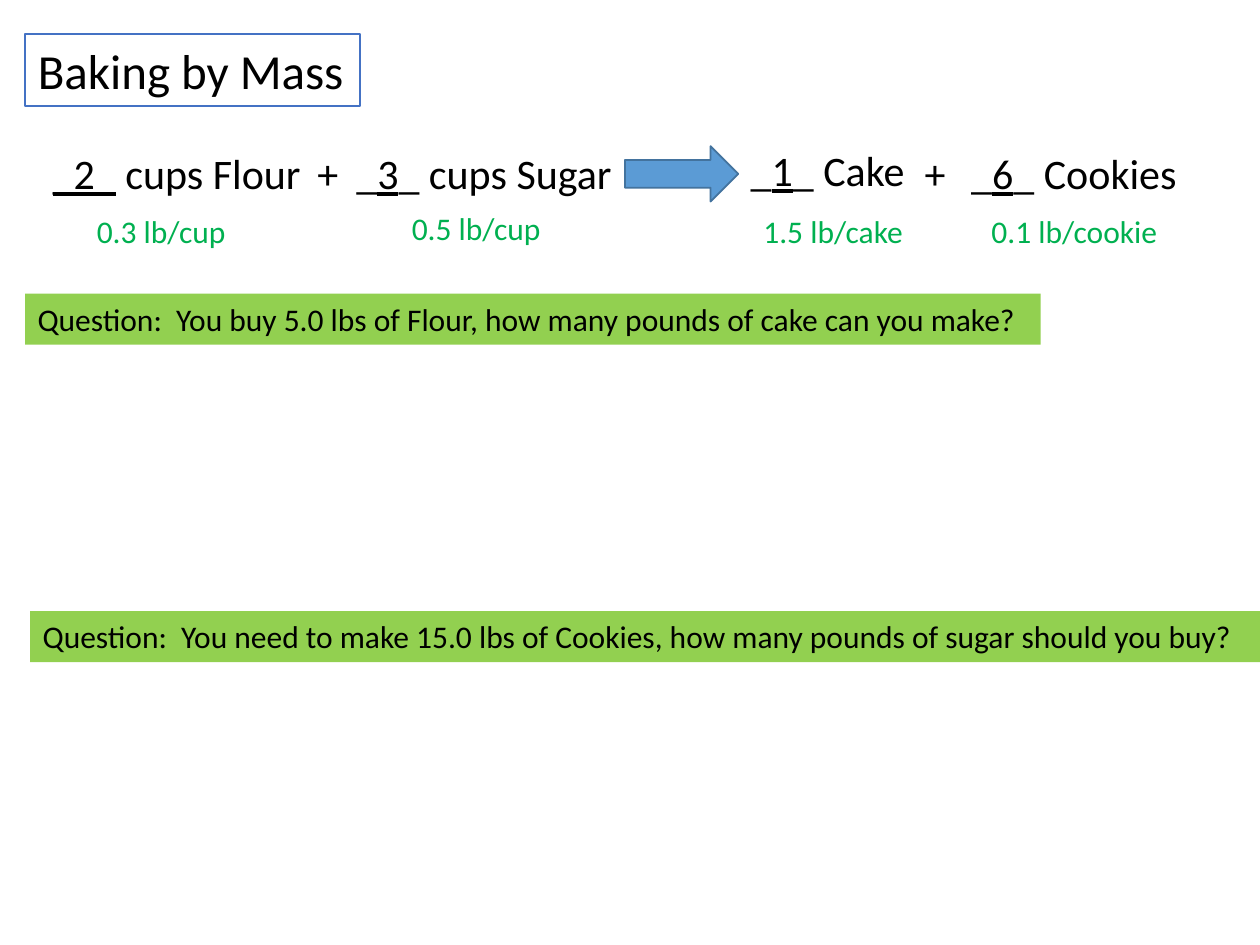
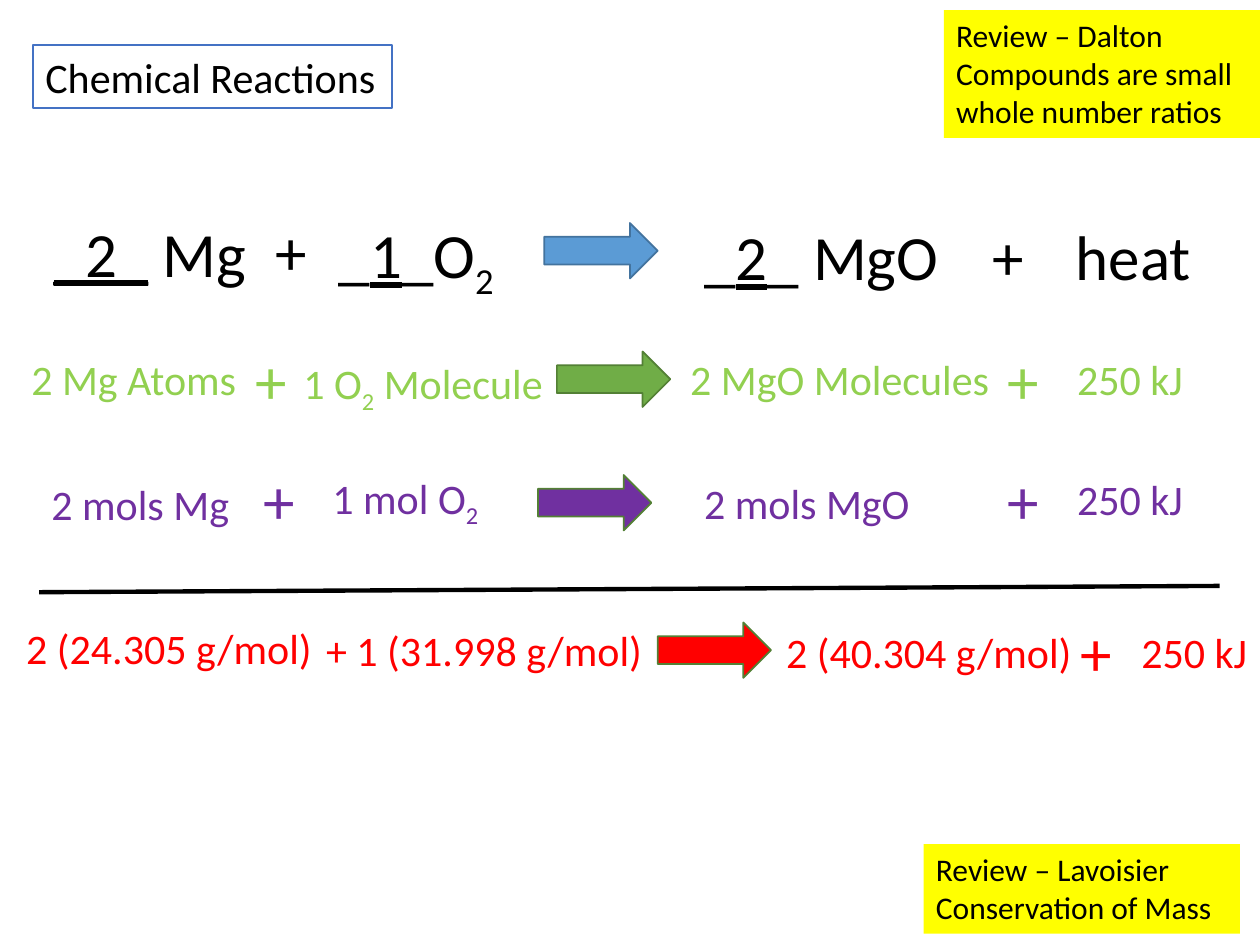
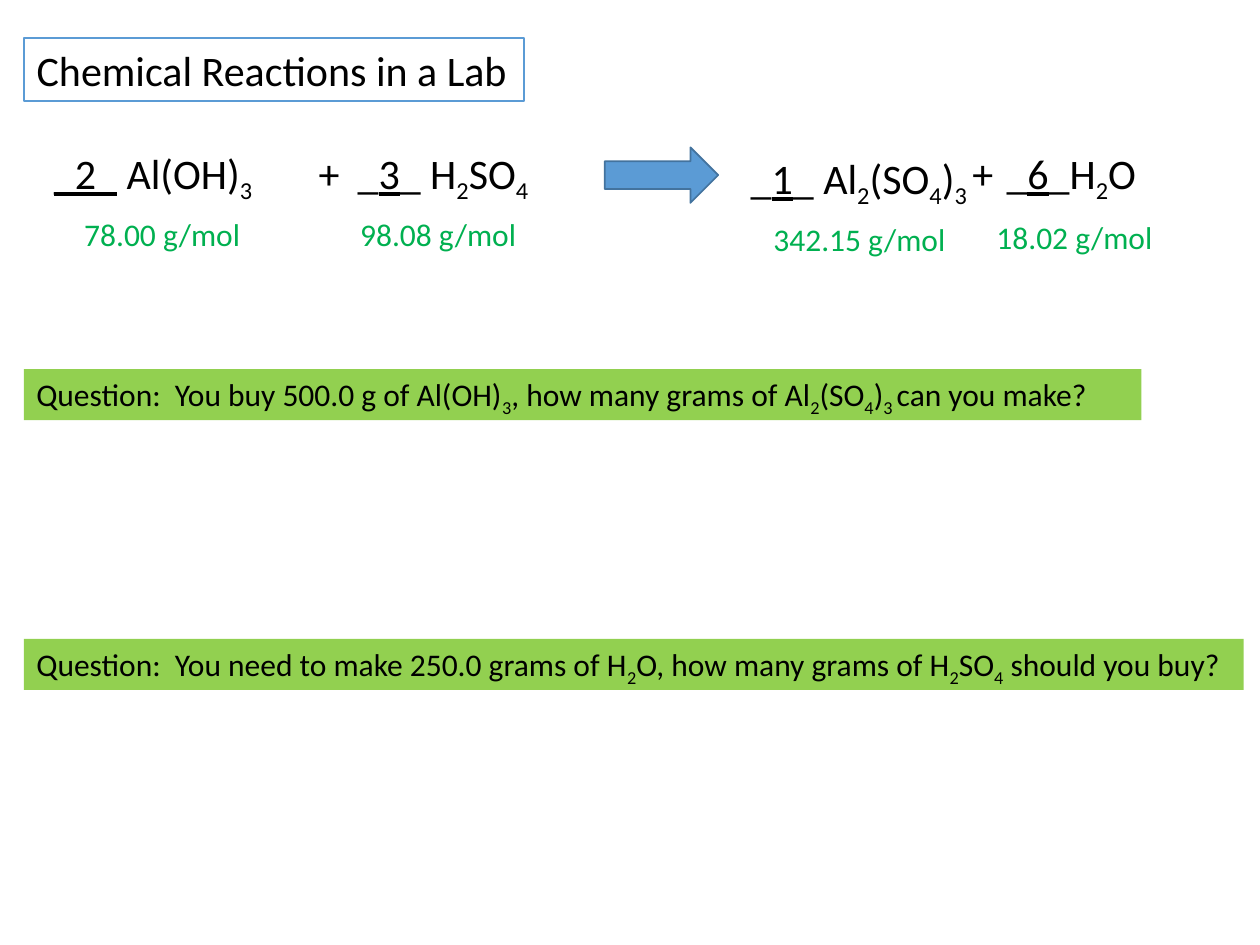
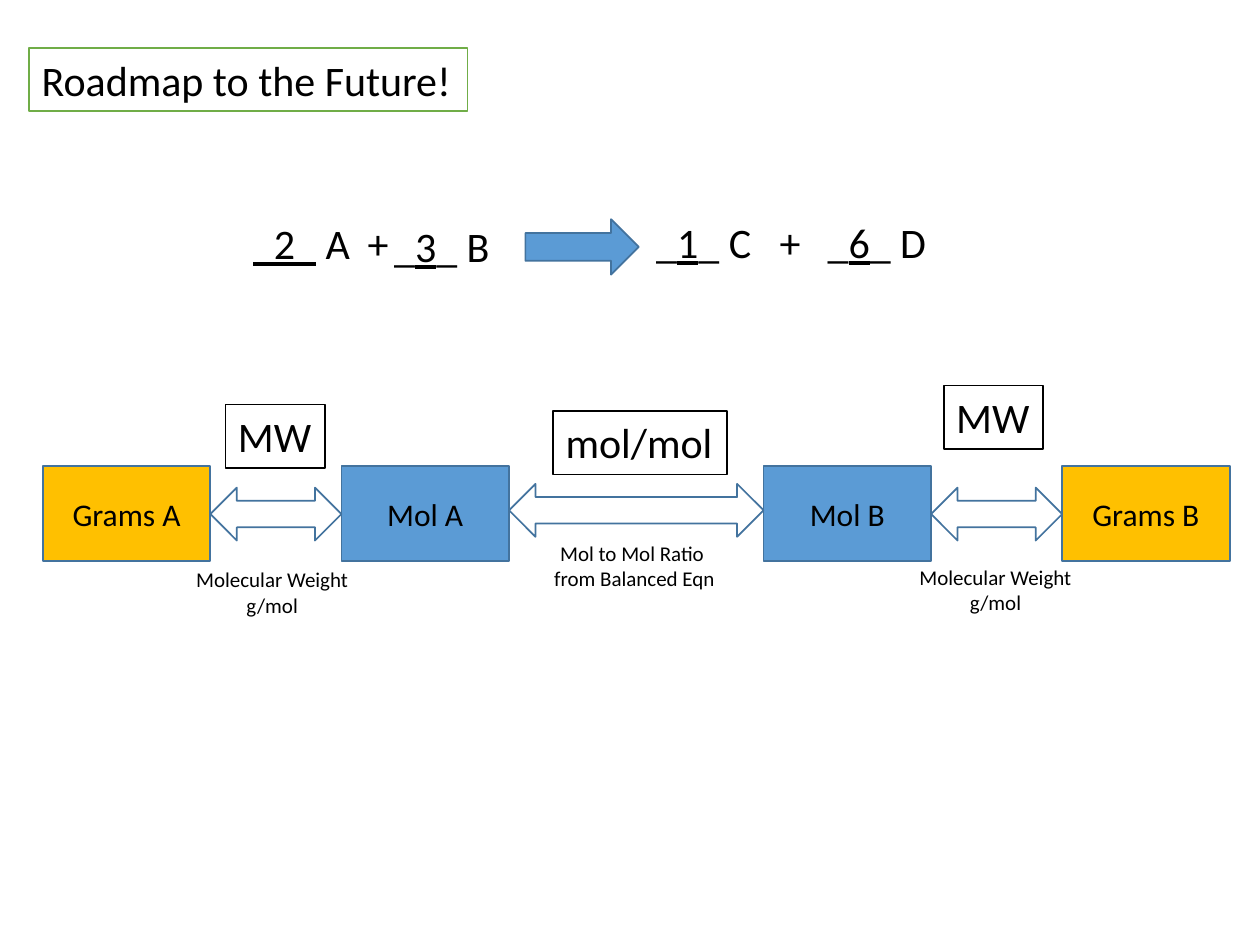
from itertools import pairwise

from lxml.etree import SubElement
from pptx import Presentation
from pptx.dml.color import RGBColor
from pptx.enum.shapes import MSO_CONNECTOR, MSO_SHAPE
from pptx.enum.text import MSO_ANCHOR, MSO_AUTO_SIZE, PP_ALIGN
from pptx.oxml.ns import qn
from pptx.util import Inches, Pt

FONT = "Calibri"
COLORS = {
    "black": "000000", "white": "FFFFFF", "title blue": "4472C4",
    "blue": "5B9BD5", "dark blue": "43739E", "green": "70AD47",
    "dark green": "538035", "lime": "92D050", "unit green": "00B050",
    "purple": "7030A0", "red": "FF0000", "yellow": "FFFF00", "gold": "FFC000",
}
ARROW_WIDTH, ARROW_HEIGHT = 9, 4.4

presentation = Presentation()
presentation.slide_width = Inches(10)
presentation.slide_height = Inches(7.5)
COLUMN = presentation.slide_width / 100
ROW = presentation.slide_height / 75


def style_shape(shape, left, top, width, height, fill=None, line=None):
    shape.left, shape.width = int(left * COLUMN), int(width * COLUMN)
    shape.top, shape.height = int(top * ROW), int(height * ROW)
    shape.shadow.inherit = False
    if fill:
        shape.fill.solid()
        shape.fill.fore_color.rgb = RGBColor.from_string(COLORS[fill])
    else:
        shape.fill.background()
    if line:
        shape.line.color.rgb = RGBColor.from_string(COLORS[line])
        shape.line.width = Pt(1)
    else:
        shape.line.fill.background()


def add_text(slide, text, left, top, width, height=None, shape=None, size=24, color="black",
             fill=None, line=None, align=PP_ALIGN.LEFT, lines=1, wrap=False):
    shape = shape or slide.shapes.add_textbox(0, 0, 0, 0)
    frame = shape.text_frame
    frame.word_wrap = wrap
    frame.auto_size = MSO_AUTO_SIZE.NONE if height else MSO_AUTO_SIZE.SHAPE_TO_FIT_TEXT
    frame.vertical_anchor = MSO_ANCHOR.MIDDLE if height else MSO_ANCHOR.TOP
    style_shape(shape, left, top, width, height or lines * size * 1.22 / 7.2 + 1, fill, line)
    for index, content in enumerate(text.split("\n")):
        paragraph = frame.add_paragraph() if index else frame.paragraphs[0]
        paragraph.alignment = align
        marked = content.replace("[", "|[").replace("{", "|{").replace("]", "|").replace("}", "|")
        for piece in filter(None, marked.split("|")):
            run = paragraph.add_run()
            run.text = piece.lstrip("[{")
            run.font.name, run.font.size = FONT, Pt(size)
            run.font.color.rgb = RGBColor.from_string(COLORS[color])
            if piece.startswith("["):
                run.font.underline = True
            if piece.startswith("{"):
                run._r.get_or_add_rPr().set("baseline", "-25000")


titles = [
    ("Baking by Mass", 2, 2.7, 26.6, 5.7, 28, "title blue"),
    ("Chemical Reactions", 2.6, 3.6, 28.5, 5, 24, "title blue"),
    ("Chemical Reactions in a Lab", 1.9, 3, 39.7, 5, 24, "blue"),
    ("Roadmap to the Future!", 2.3, 3.8, 34.8, 5, 24, "green"),
]
slides = []
for title, left, top, width, height, size, line in titles:
    slide = presentation.slides.add_slide(presentation.slide_layouts[5])
    add_text(slide, title, left, top, width, height, shape=slide.shapes.title, size=size,
             fill="white", line=line)
    slides.append(slide)
baking, reactions, lab, roadmap = slides

equations = [
    (baking, 24, [("[_2_] cups Flour", 3.2, 11.2, 21.9), ("+", 24.2, 11.2, 3.7),
                  ("_[3]_ cups Sugar", 27.3, 11.2, 22.5), ("_[1]_ Cake", 58.6, 11, 14.3),
                  ("+", 72.4, 11.2, 3.7), ("_[6]_ Cookies", 76.1, 11.2, 18.5)]),
    (reactions, 36, [("[_2_] Mg", 3.3, 16.5, 17.4), ("+", 20.9, 16.4, 4.5),
                     ("_[1]_O{2}", 25.9, 16.6, 14.6), ("_[2]_ MgO", 54.9, 16.8, 20.8),
                     ("+", 77.8, 16.8, 4.5), ("heat", 84.4, 16.8, 11.2)]),
    (lab, 24, [("[_2_] Al(OH){3}", 3.3, 11.2, 19.4), ("+", 24.3, 11.2, 3.7),
               ("_[3]_ H{2}SO{4}", 27.4, 11.2, 16), ("_[1]_ Al{2}(SO{4}){3}", 58.6, 11.6, 20.3),
               ("+", 76.2, 11.2, 3.7), ("_[6]_H{2}O", 78.9, 11.2, 12.6)]),
    (roadmap, 24, [("[_2_] A", 19.1, 16.8, 9.8), ("+", 28.2, 16.8, 3.7),
                   ("_[3]_ B", 30.3, 17, 9.7), ("_[1]_ C", 51.1, 16.7, 9.6),
                   ("+", 60.9, 16.7, 3.7), ("_[6]_ D", 64.7, 16.7, 9.9)]),
]
for slide, size, terms in equations:
    for text, left, top, width in terms:
        add_text(slide, text, left, top, width, size=size)

reaction_arrows = [
    (baking, 49.6, 11.6, "blue", "dark blue"),
    (reactions, 43.2, 17.7, "blue", "dark blue"),
    (reactions, 44.2, 27.9, "green", "dark green"),
    (reactions, 42.7, 37.7, "purple", "dark green"),
    (reactions, 52.2, 49.4, "red", "dark green"),
    (lab, 48, 11.7, "blue", "dark blue"),
    (roadmap, 41.7, 17.4, "blue", "dark blue"),
]
for slide, left, top, fill, line in reaction_arrows:
    arrow = slide.shapes.add_shape(MSO_SHAPE.RIGHT_ARROW, 0, 0, 0, 0)
    style_shape(arrow, left, top, ARROW_WIDTH, ARROW_HEIGHT, fill, line)

unit_masses = [
    (baking, "0.3 lb/cup", 6.7, 16.3, 12.4),
    (baking, "0.5 lb/cup", 31.7, 16.1, 12.4),
    (baking, "1.5 lb/cake", 59.6, 16.3, 13.2),
    (baking, "0.1 lb/cookie", 77.7, 16.3, 15.3),
    (lab, "78.00 g/mol", 5.7, 16.6, 14.5),
    (lab, "98.08 g/mol", 27.6, 16.6, 14.5),
    (lab, "342.15 g/mol", 60.4, 17, 15.8),
    (lab, "18.02 g/mol", 78.1, 16.8, 14.5),
]
for slide, text, left, top, width in unit_masses:
    add_text(slide, text, left, top, width, size=18, color="unit green")

questions = [
    (baking, "You buy 5.0 lbs of Flour, how many pounds of cake can you make?", 2, 23.3, 80.6),
    (baking, "You need to make 15.0 lbs of Cookies, how many pounds of sugar should you buy?",
     2.4, 48.5, 97.6),
    (lab, "You buy 500.0 g of Al(OH){3}, how many grams of Al{2}(SO{4}){3 }can you make?",
     1.9, 29.3, 88.7),
    (lab, "You need to make 250.0 grams of H{2}O, how many grams of H{2}SO{4} should you buy?",
     1.9, 50.7, 96.8),
]
for slide, text, left, top, width in questions:
    add_text(slide, "Question:  " + text, left, top, width, size=18, fill="lime")

reaction_rows = [
    ("lime", [("2 Mg Atoms", 1.5, 27.6, 18.4), ("1 O{2} Molecule", 23.1, 27.9, 21.3),
              ("2 MgO Molecules", 53.8, 27.6, 26), ("250 kJ", 84.5, 27.6, 10.5)],
     26.6, (19.3, 79)),
    ("purple", [("2 mols Mg", 3.1, 37.5, 16.2), ("1 mol O{2}", 25.4, 37, 13.8),
                ("2 mols MgO", 54.9, 37.4, 18.4), ("250 kJ", 84.5, 37.1, 10.5)],
     36.1, (19.9, 79)),
    ("red", [("2 (24.305 g/mol)", 1.1, 48.9, 24.8), ("+ 1 (31.998 g/mol)", 24.9, 49.1, 27.3),
             ("2 (40.304 g/mol)", 61.4, 49.2, 24.8), ("250 kJ", 89.6, 49.2, 10.5)],
     48.2, (84.8,)),
]
for color, terms, plus_top, plus_lefts in reaction_rows:
    for text, left, top, width in terms:
        add_text(reactions, text, left, top, width, color=color)
    for left in plus_lefts:
        add_text(reactions, "+", left, plus_top, 4.5, size=36, color=color)

divider = reactions.shapes.add_connector(
    MSO_CONNECTOR.STRAIGHT, int(3.1 * COLUMN), int(47 * ROW), int(96.8 * COLUMN), int(46.5 * ROW))
divider.line.color.rgb = RGBColor.from_string(COLORS["black"])
divider.line.width = Pt(2.5)
SubElement(divider._element.spPr, qn("a:effectLst"))

reviews = [
    ("Review – Dalton\nCompounds are small whole number ratios", 74.9, 0.8, 3),
    ("Review – Lavoisier\nConservation of Mass", 73.3, 67, 2),
]
for text, left, top, lines in reviews:
    add_text(reactions, text, left, top, 25.1, size=18, fill="yellow", lines=lines, wrap=True)

STATION_WIDTH = 13.3
stations = [("Grams A", 3.4, "gold"), ("Mol A", 27.1, "blue"),
            ("Mol B", 60.6, "blue"), ("Grams B", 84.3, "gold")]
for text, left, fill in stations:
    station = roadmap.shapes.add_shape(MSO_SHAPE.RECTANGLE, 0, 0, 0, 0)
    add_text(roadmap, text, left, 37, STATION_WIDTH, 7.5, shape=station, size=18,
             fill=fill, line="dark blue", align=PP_ALIGN.CENTER, wrap=True)

for (start, end), top in zip(pairwise(stations), (38.7, 38.4, 38.7)):
    left = start[1] + STATION_WIDTH
    arrow = roadmap.shapes.add_shape(MSO_SHAPE.LEFT_RIGHT_ARROW, 0, 0, 0, 0)
    style_shape(arrow, left, top, end[1] - left, 4.2, line="dark blue")

factors = [("MW", 17.9, 32.1, 7.9), ("mol/mol", 43.9, 32.6, 13.8), ("MW", 74.9, 30.6, 7.9)]
for text, left, top, width in factors:
    add_text(roadmap, text, left, top, width, fill="white", line="black")

captions = [
    ("Molecular Weight\ng/mol", 14.5, 44.5, 14.2),
    ("Mol to Mol Ratio \nfrom Balanced Eqn", 42.9, 42.4, 14.9),
    ("Molecular Weight\ng/mol", 71.9, 44.3, 14.2),
]
for text, left, top, width in captions:
    add_text(roadmap, text, left, top, width, size=12, align=PP_ALIGN.CENTER, lines=2)

presentation.save("out.pptx")
